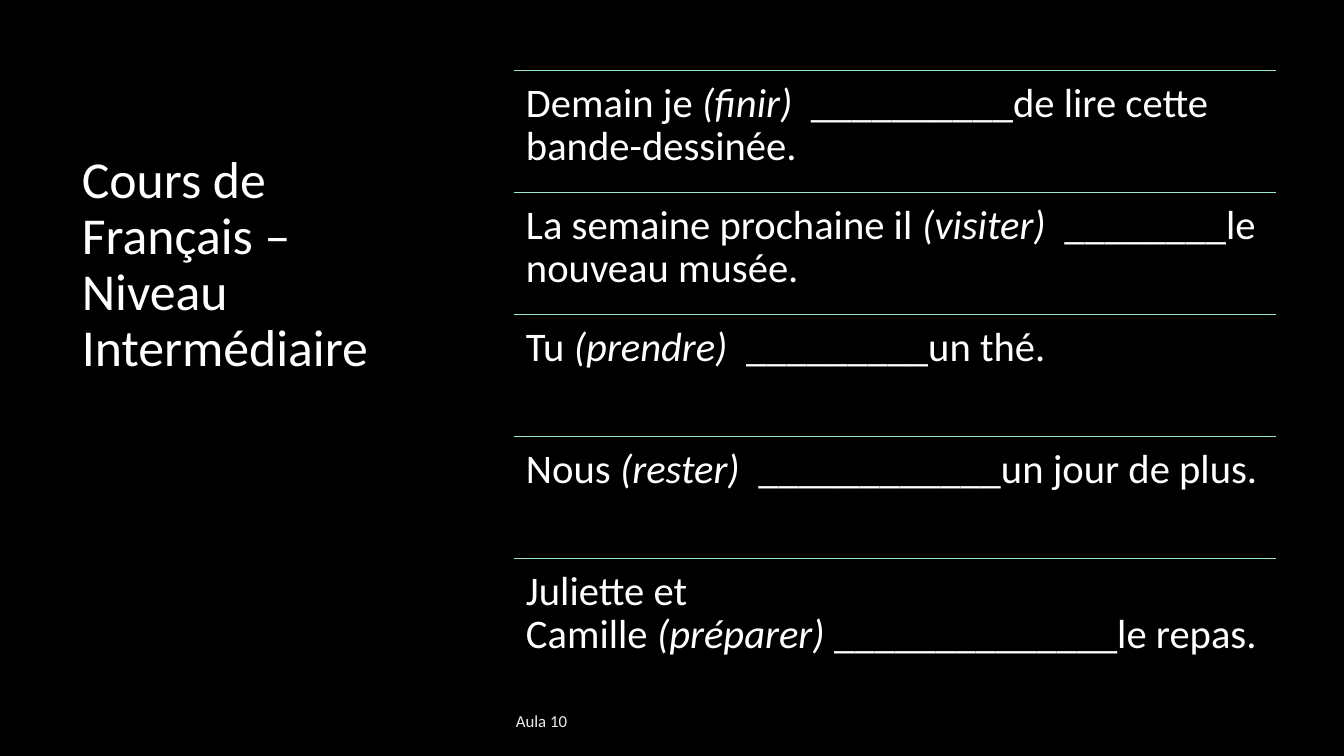
from dataclasses import dataclass

from lxml import etree
from pptx import Presentation
from pptx.dml.color import RGBColor
from pptx.enum.shapes import MSO_CONNECTOR as Connector
from pptx.enum.text import MSO_ANCHOR as Anchor
from pptx.oxml.ns import qn
from pptx.util import Emu, Pt


@dataclass(frozen=True)
class Theme:
    font: str = "Calibri"
    background: RGBColor = RGBColor(0x00, 0x00, 0x00)
    text: RGBColor = RGBColor(0xFF, 0xFF, 0xFF)
    footer: RGBColor = RGBColor(0xED, 0xED, 0xED)
    rule: RGBColor = RGBColor(0x97, 0xE9, 0xD5)
    title_size: int = 37
    exercise_size: int = 29
    footer_size: int = 12
    rule_width: float = 0.5


theme = Theme()
NBSP = chr(160)


def px(length):
    return Emu(round(length * 914400 / 100.8))


def add_text(box, runs, size, color, inset=None, anchor=Anchor.TOP, spacing=0.9):
    """Add a one-paragraph text box; runs are (text, italic) pairs."""
    frame = slide.shapes.add_textbox(*map(px, box)).text_frame
    frame.word_wrap = True
    frame.vertical_anchor = anchor
    if inset is not None:
        frame.margin_left = frame.margin_right = px(inset)
        frame.margin_top = frame.margin_bottom = px(inset)
    paragraph = frame.paragraphs[0]
    paragraph.line_spacing = spacing
    for text, italic in runs:
        run = paragraph.add_run()
        run.text = text
        run.font.name = theme.font
        run.font.size = Pt(size)
        run.font.italic = italic
        run.font.color.rgb = color


presentation = Presentation()
presentation.slide_width, presentation.slide_height = px(1344), px(756)
slide = presentation.slides.add_slide(presentation.slide_layouts[6])
slide.background.fill.solid()
slide.background.fill.fore_color.rgb = theme.background

add_text((72, 149, 324, 491), [("Cours de Français – Niveau Intermédiaire", False)],
         theme.title_size, theme.text)
add_text((506, 701, 386, 40), [("Aula 10", False)],
         theme.footer_size, theme.footer, anchor=Anchor.MIDDLE, spacing=1.0)

# Subject, verb to conjugate, spaces before the blank, blank length, ending
exercises = [
    ("Demain je", "(finir)", 2, 10, "de lire cette bande-dessinée."),
    ("La semaine prochaine il", "(visiter)", 2, 8, "le nouveau musée."),
    ("Tu", "(prendre)", 2, 9, "un thé."),
    ("Nous", "(rester)", 2, 12, "un jour de plus."),
    ("Juliette et Camille", "(préparer)", 1, 14, "le repas."),
]
left, top, width, row_height = 514, 70, 762, 122

for row, (subject, verb, gap, blank, ending) in enumerate(exercises):
    y = top + row * row_height
    rule = slide.shapes.add_connector(
        Connector.STRAIGHT, px(left), px(y), px(left + width), px(y))
    rule.line.color.rgb = theme.rule
    rule.line.width = Pt(theme.rule_width)
    etree.SubElement(rule._element.spPr, qn("a:effectLst"))

    runs = [(subject + NBSP, False), (verb, True),
            (NBSP * gap + "_" * blank + ending, False)]
    add_text((left, y, width, row_height), runs,
             theme.exercise_size, theme.text, inset=12)

presentation.save("out.pptx")
